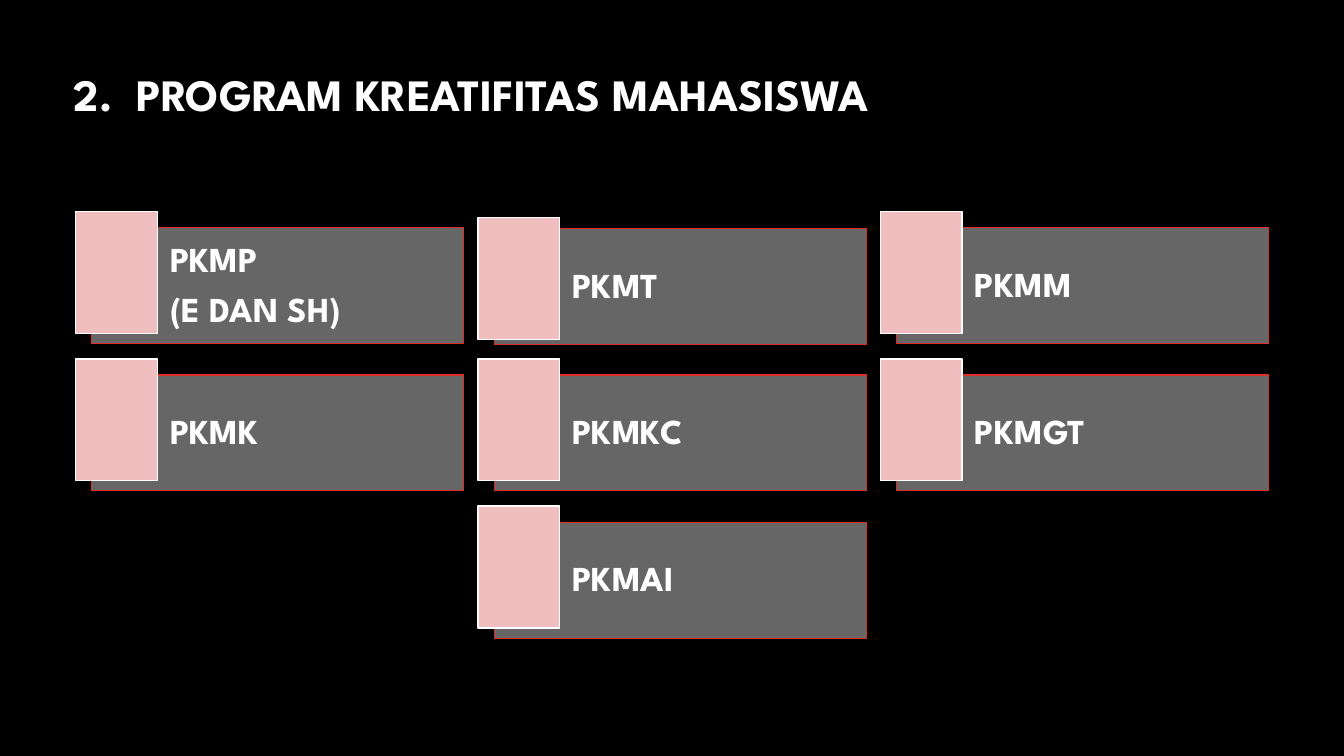
from lxml import etree
from pptx import Presentation
from pptx.dml.color import RGBColor
from pptx.enum.shapes import MSO_SHAPE
from pptx.enum.text import MSO_ANCHOR, PP_ALIGN
from pptx.oxml.ns import qn
from pptx.util import Inches, Pt

FONT = "League Spartan"
COLORS = {"background": "000000", "white": "FFFFFF", "edge": "DF2E28", "tile": "F0BEBE"}

# Grid of cards: first card's corner and the step between cards
GRID_LEFT, GRID_TOP = 0.75, 2.1
COLUMN_STEP, ROW_STEP = 3.99, 1.46
PANEL_OFFSET = 0.16

# Column, row, lines of text, extra drop of the panel and of the tile
CARDS = [
    (0, 0, ["PKMP", "(E DAN SH)"], 0, 0),
    (1, 0, ["PKMT"], 0.01, 0.06),
    (2, 0, ["PKMM"], 0, 0),
    (0, 1, ["PKMK"], 0, 0),
    (1, 1, ["PKMKC"], 0, 0),
    (2, 1, ["PKMGT"], 0, 0),
    (1, 2, ["PKMAI"], 0, 0),
]


def color(name):
    return RGBColor.from_string(COLORS[name])


def add_text(paragraph, text, size):
    run = paragraph.add_run()
    run.text = text
    run.font.name = FONT
    run.font.size = Pt(size)
    run.font.bold = True
    run.font.color.rgb = color("white")


def add_box(slide, left, top, width, height, fill, line, line_width):
    box = slide.shapes.add_shape(
        MSO_SHAPE.RECTANGLE, Inches(left), Inches(top), Inches(width), Inches(height))
    box.shadow.inherit = False
    box.fill.solid()
    box.fill.fore_color.rgb = color(fill)
    box.line.color.rgb = color(line)
    box.line.width = Pt(line_width)
    return box


def set_opacity(shape, percent):
    fill_color = shape._element.spPr.find(qn("a:solidFill"))[0]
    etree.SubElement(fill_color, qn("a:alpha")).set("val", str(percent * 1000))


def add_title(slide, left, top, width, height, text):
    title = slide.shapes.title
    title.left, title.top = Inches(left), Inches(top)
    title.width, title.height = Inches(width), Inches(height)
    frame = title.text_frame
    frame.word_wrap = True
    frame.vertical_anchor = MSO_ANCHOR.TOP
    paragraph = frame.paragraphs[0]
    paragraph.alignment = PP_ALIGN.LEFT
    add_text(paragraph, text, 32)


def add_card(slide, left, top, lines, panel_drop, tile_drop):
    # Translucent panel with the programme name
    panel = add_box(slide, left + PANEL_OFFSET, top + PANEL_OFFSET + panel_drop,
                    3.69, 1.15, "white", "edge", 0.75)
    set_opacity(panel, 40)
    frame = panel.text_frame
    frame.word_wrap = True
    frame.vertical_anchor = MSO_ANCHOR.MIDDLE
    frame.margin_left = Inches(0.78)
    frame.margin_right = frame.margin_top = frame.margin_bottom = Inches(0.1)
    for index, line in enumerate(lines):
        paragraph = frame.add_paragraph() if index else frame.paragraphs[0]
        paragraph.alignment = PP_ALIGN.LEFT
        paragraph.line_spacing = 0.9
        paragraph.space_after = Pt(8.75)
        add_text(paragraph, line, 25)

    # Pink tile over the panel's corner
    add_box(slide, left, top + tile_drop, 0.81, 1.21, "tile", "white", 1)


def main():
    presentation = Presentation()
    presentation.slide_width = Inches(13.33)
    presentation.slide_height = Inches(7.5)
    slide = presentation.slides.add_slide(presentation.slide_layouts[5])
    slide.background.fill.solid()
    slide.background.fill.fore_color.rgb = color("background")

    add_title(slide, 0.63, 0.61, 10.52, 0.64, "2.  PROGRAM KREATIFITAS MAHASISWA")
    for column, row, lines, panel_drop, tile_drop in CARDS:
        add_card(slide, GRID_LEFT + column * COLUMN_STEP, GRID_TOP + row * ROW_STEP,
                 lines, panel_drop, tile_drop)

    presentation.save("out.pptx")


if __name__ == "__main__":
    main()
